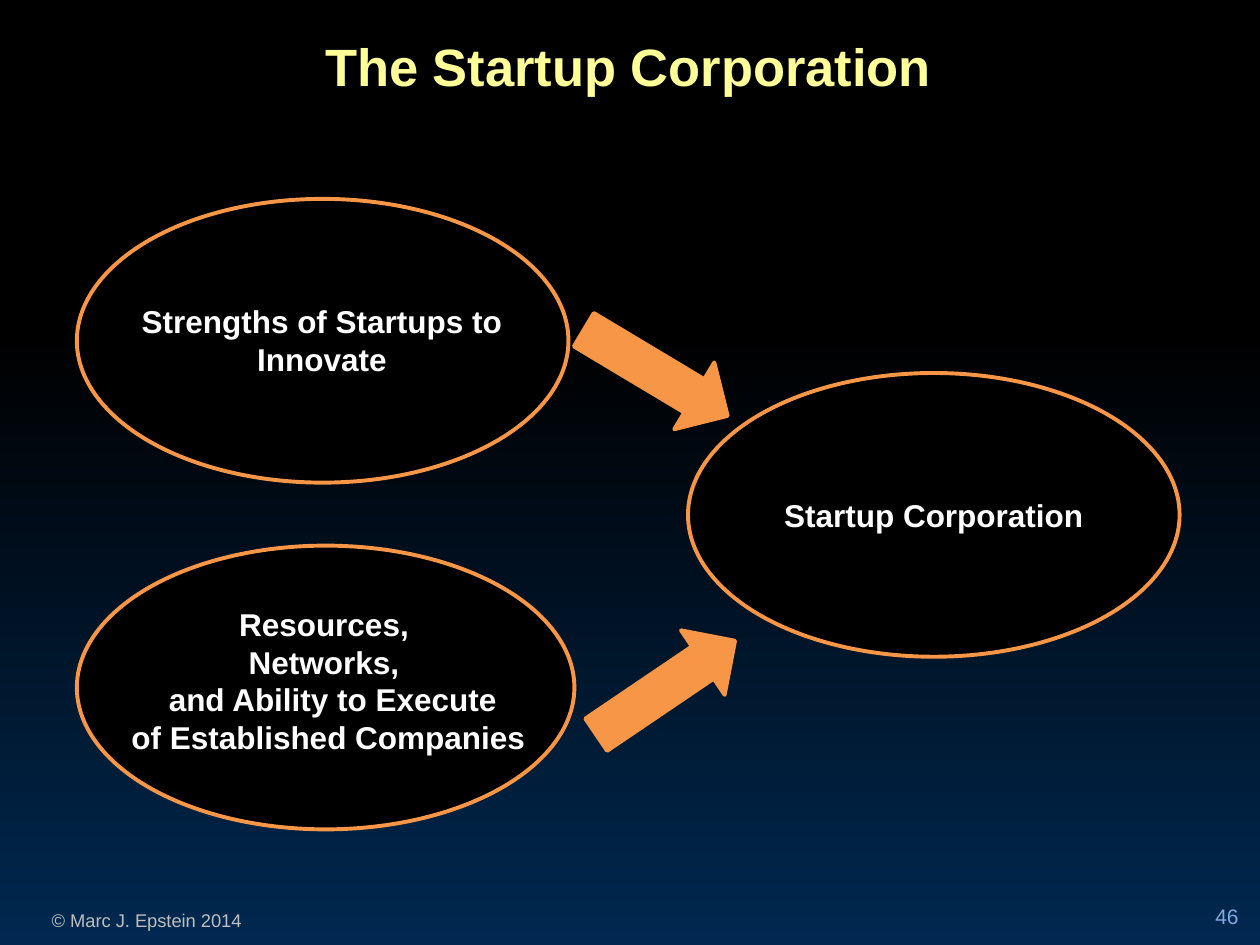
from pptx import Presentation
from pptx import util as u
from pptx.dml.color import RGBColor
from pptx.enum import shapes, text

COLORS = {
    "black": "000000",
    "navy": "002850",
    "orange": "F79646",
    "white": "FFFFFF",
    "yellow": "FFFF99",
    "grey": "BFBFBF",
    "sky": "81ABE0",
}


class SlideBuilder:
    font = "Arial"
    outline = u.Pt(2.25)

    def __init__(self, slide):
        self.slide = slide

    def color(self, name):
        return RGBColor.from_string(COLORS[name])

    def box(self, lengths):
        return [u.Cm(length) for length in lengths]

    def background(self, stops):
        fill = self.slide.background.fill
        fill.gradient()
        fill.gradient_angle = 270
        for stop, (position, name) in zip(fill.gradient_stops, stops):
            stop.position = position
            stop.color.rgb = self.color(name)

    def add_lines(self, frame, lines, size, color, bold=True, align=text.PP_ALIGN.CENTER):
        for index, line in enumerate(lines):
            paragraph = frame.add_paragraph() if index else frame.paragraphs[0]
            paragraph.alignment = align
            run = paragraph.add_run()
            run.text = line
            run.font.name = self.font
            run.font.size = u.Pt(size)
            run.font.bold = bold
            run.font.color.rgb = self.color(color)

    def title(self, lengths, line):
        heading = self.slide.shapes.title
        heading.left, heading.top, heading.width, heading.height = self.box(lengths)
        heading.text_frame.vertical_anchor = text.MSO_ANCHOR.TOP
        self.add_lines(heading.text_frame, [line], 30, "yellow")

    def label(self, lengths, lines, size=18, color="white", **style):
        frame = self.slide.shapes.add_textbox(*self.box(lengths)).text_frame
        frame.word_wrap = True
        self.add_lines(frame, lines, size, color, **style)
        return frame

    def shape(self, preset, lengths, fill):
        figure = self.slide.shapes.add_shape(preset, *self.box(lengths))
        figure.shadow.inherit = False
        figure.fill.solid()
        figure.fill.fore_color.rgb = self.color(fill)
        figure.line.color.rgb = self.color("orange")
        figure.line.width = self.outline
        return figure

    def ellipse(self, left, top, width=9.91):
        return self.shape(shapes.MSO_SHAPE.OVAL, (left, top, width, 5.72), "black")

    def arrow(self, left, top, rotation):
        lengths = (left, top, 3.38, 1.57)
        self.shape(shapes.MSO_SHAPE.RIGHT_ARROW, lengths, "orange").rotation = rotation


def main():
    deck = Presentation()
    deck.slide_width, deck.slide_height = u.Cm(25.4), u.Cm(19.05)
    builder = SlideBuilder(deck.slides.add_slide(deck.slide_layouts[5]))
    builder.background([(0.35, "black"), (1, "navy")])

    builder.label((-0.43, 18.21, 6.78, 0.71), ["© Marc J. Epstein 2014"],
                  size=10.5, color="grey", bold=False)
    page_number = builder.label((22.86, 17.83, 2.11, 1.02), ["46"], size=12,
                                color="sky", bold=False, align=text.PP_ALIGN.RIGHT)
    page_number.margin_left = page_number.margin_right = 0
    page_number.vertical_anchor = text.MSO_ANCHOR.BOTTOM
    builder.title((-0.03, 0.56, 25.4, 1.55), "The Startup Corporation")

    corporation = builder.ellipse(13.87, 7.52).text_frame
    corporation.word_wrap = False
    corporation.vertical_anchor = text.MSO_ANCHOR.MIDDLE
    builder.add_lines(corporation, ["Startup Corporation"], 18, "white")

    builder.ellipse(1.55, 4.01)
    builder.ellipse(1.55, 11, width=10.03)
    builder.arrow(11.53, 6.73, 30.9)
    builder.arrow(11.73, 13.08, 325.9)
    builder.label((2.39, 12.07, 8.46, 3.33),
                  ["Resources, ", "Networks, ", " and Ability to Execute",
                   "of Established Companies"])
    builder.label((2.26, 5.97, 8.46, 1.8), ["Strengths of Startups to Innovate"])

    deck.save("out.pptx")


if __name__ == "__main__":
    main()
